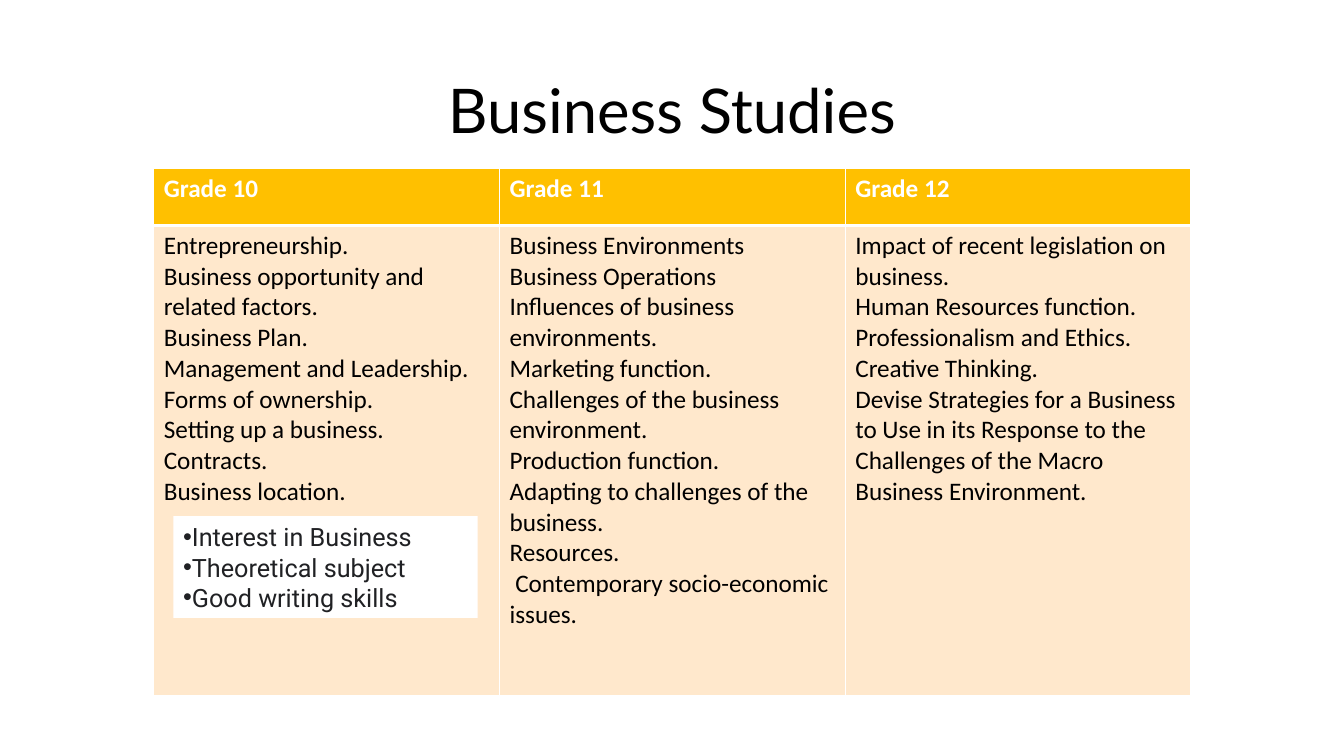
import dataclasses

import lxml.etree
import pptx
import pptx.dml.color
import pptx.enum.shapes
import pptx.enum.text
import pptx.oxml.ns
import pptx.util

Pt = pptx.util.Pt
WHITE, BLACK = "FFFFFF", "000000"


@dataclasses.dataclass
class Grade:
    name: str
    topics: list[str]


@dataclasses.dataclass
class Style:
    font: str
    color: str
    size: float = 18
    bold: bool = False


GRADES = [
    Grade("Grade 10", [
        "Entrepreneurship.",
        "Business opportunity and related factors.",
        "Business Plan.",
        "Management and Leadership.",
        "Forms of ownership.",
        "Setting up a business.",
        "Contracts.",
        "Business location.",
    ]),
    Grade("Grade 11", [
        "Business Environments",
        "Business Operations",
        "Influences of business environments.",
        "Marketing function.",
        "Challenges of the business environment.",
        "Production function.",
        "Adapting to challenges of the business.",
        "Resources.",
        " Contemporary socio-economic issues.",
    ]),
    Grade("Grade 12", [
        "Impact of recent legislation on business.",
        "Human Resources function.",
        "Professionalism and Ethics.",
        "Creative Thinking.",
        "Devise Strategies for a Business to Use in its Response to the "
        "Challenges of the Macro Business Environment.",
    ]),
]
SKILLS = ["Interest in Business", "Theoretical subject", "Good writing skills"]

TITLE = Style("Lato", BLACK, 44)
HEAD = Style("Calibri", WHITE, bold=True)
BODY = Style("Calibri", BLACK)
NOTE = Style("Roboto", "202124")


def rgb(code: str) -> pptx.dml.color.RGBColor:
    return pptx.dml.color.RGBColor.from_string(code)


def paint(item, code: str) -> None:
    item.fill.solid()
    item.fill.fore_color.rgb = rgb(code)


def write(frame, lines: list[str], style: Style, align=None) -> None:
    for i, line in enumerate(lines):
        para = frame.paragraphs[0] if i == 0 else frame.add_paragraph()
        para.alignment = align
        run = para.add_run()
        run.text = line
        run.font.name = style.font
        run.font.size = Pt(style.size)
        run.font.bold = style.bold
        run.font.color.rgb = rgb(style.color)


def child(node, tag: str, **attrs: str):
    return lxml.etree.SubElement(node, pptx.oxml.ns.qn(tag), **attrs)


def border(cell, widths: dict[str, float]) -> None:
    """Draw white edges, keyed L, R, T and B in that order."""
    props = cell._tc.get_or_add_tcPr()
    for side, width in widths.items():
        line = child(props, f"a:ln{side}", w=str(Pt(width)))
        child(child(line, "a:solidFill"), "a:srgbClr", val=WHITE)


def add_title(slide) -> None:
    title = slide.shapes.title
    title.left, title.top = Pt(66), Pt(28.8)
    title.width, title.height = Pt(828), Pt(104.4)
    title.text_frame.vertical_anchor = pptx.enum.text.MSO_ANCHOR.MIDDLE
    write(title.text_frame, ["Business Studies"], TITLE,
          pptx.enum.text.PP_ALIGN.CENTER)
    title.text_frame.paragraphs[0].line_spacing = 0.9


def add_grades(slide) -> None:
    table = slide.shapes.add_table(
        2, len(GRADES), Pt(109.8), Pt(120), Pt(741), Pt(377)).table
    table.rows[0].height, table.rows[1].height = Pt(41), Pt(336)
    for col, grade in enumerate(GRADES):
        table.columns[col].width = Pt(247)
        head, body = table.cell(0, col), table.cell(1, col)
        border(head, {"L": 1, "R": 1, "T": 1, "B": 3})
        border(body, {"L": 1, "R": 1, "T": 3, "B": 1})
        paint(head, "FFC000")
        paint(body, "FFE8CC")
        write(head.text_frame, [grade.name], HEAD)
        write(body.text_frame, grade.topics, BODY)


def add_skills(slide) -> None:
    box = slide.shapes.add_shape(
        pptx.enum.shapes.MSO_SHAPE.RECTANGLE,
        Pt(123.8), Pt(368.6), Pt(217.4), Pt(72.7))
    box.shadow.inherit = False
    paint(box, WHITE)
    box.line.fill.background()
    frame = box.text_frame
    frame.word_wrap = True
    frame.vertical_anchor = pptx.enum.text.MSO_ANCHOR.MIDDLE
    write(frame, SKILLS, NOTE, pptx.enum.text.PP_ALIGN.LEFT)
    for para in frame.paragraphs:
        props = para._p.get_or_add_pPr()
        child(props, "a:buFont", typeface="Arial")
        child(props, "a:buChar", char="•")


def main() -> None:
    deck = pptx.Presentation()
    deck.slide_width, deck.slide_height = Pt(960), Pt(540)
    slide = deck.slides.add_slide(deck.slide_layouts[5])
    add_title(slide)
    add_grades(slide)
    add_skills(slide)
    deck.save("out.pptx")


if __name__ == "__main__":
    main()
